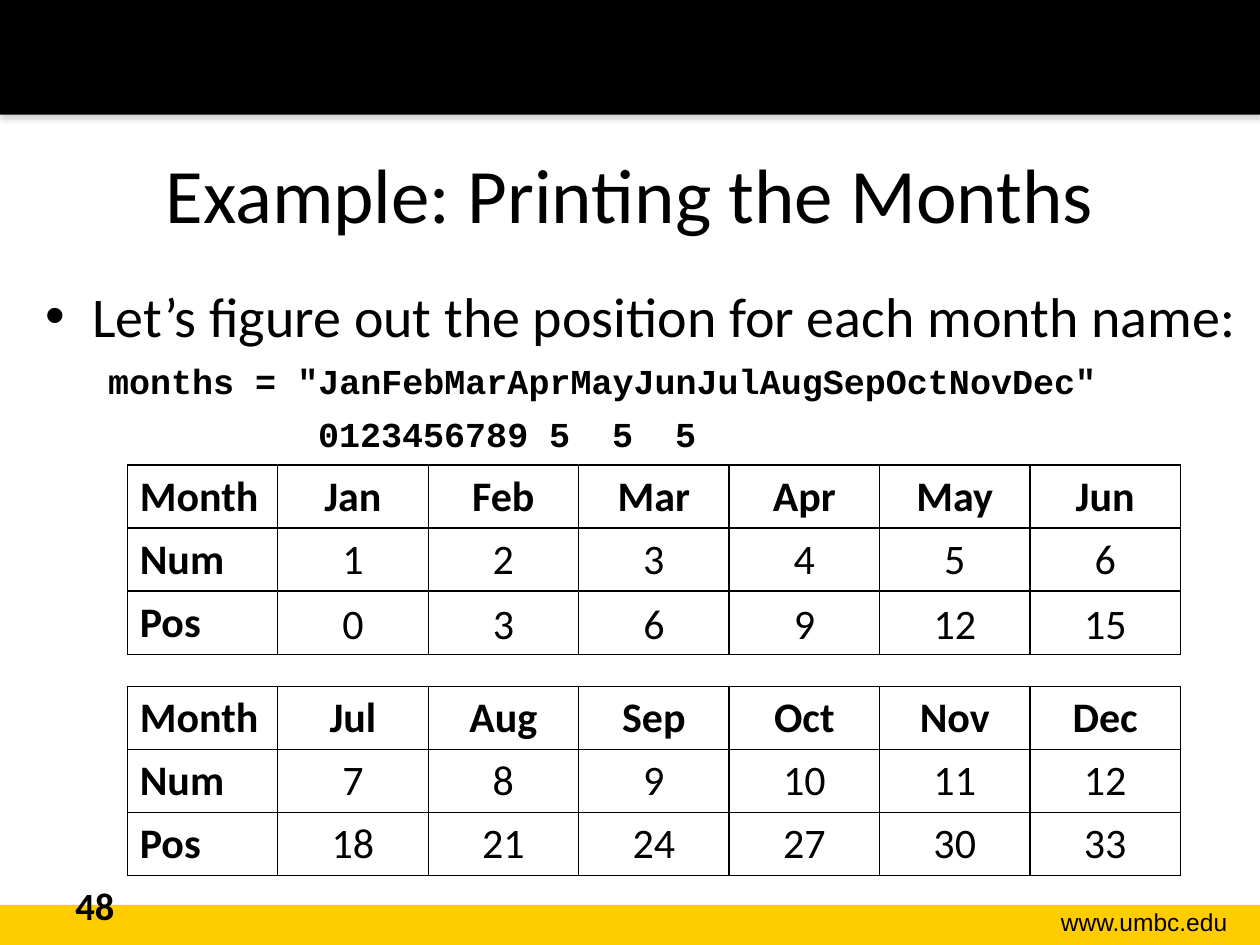
from dataclasses import dataclass

from lxml import etree
from pptx import Presentation
from pptx import util as u
from pptx.dml.color import RGBColor
from pptx.enum import shapes, text
from pptx.oxml.ns import qn

Pt = u.Pt
LEFT, CENTER, RIGHT = text.PP_ALIGN.LEFT, text.PP_ALIGN.CENTER, text.PP_ALIGN.RIGHT
TOP, MIDDLE = text.MSO_ANCHOR.TOP, text.MSO_ANCHOR.MIDDLE


@dataclass(frozen=True)
class Theme:
    ink: str = "000000"
    paper: str = "FFFFFF"
    gold: str = "FFCC00"
    shade: str = "808080"
    body_font: str = "Calibri"
    code_font: str = "Courier New"
    footer_font: str = "Arial"
    title_size: int = 44
    body_size: int = 32
    table_size: int = 24
    number_size: int = 22
    code_size: int = 20
    footer_size: int = 14


THEME = Theme()


def rgb(value):
    return RGBColor.from_string(value)


def child(parent, tag, **attributes):
    return etree.SubElement(parent, qn(tag), {k: str(v) for k, v in attributes.items()})


def write(paragraph, words, *, size, font=THEME.body_font, bold=False,
          align=LEFT, before=0, margin=0, indent=0, bullet=None, tabs=()):
    """Put formatted words into a paragraph."""
    properties = paragraph._p.get_or_add_pPr()
    properties.set("marL", str(Pt(margin)))
    properties.set("indent", str(Pt(indent)))
    paragraph.alignment = align
    paragraph.space_before = Pt(before)
    if bullet:
        child(properties, "a:buFont", typeface="Arial")
        child(properties, "a:buChar", char=bullet)
    else:
        child(properties, "a:buNone")
    if tabs:
        stops = child(properties, "a:tabLst")
        for stop in tabs:
            child(stops, "a:tab", pos=Pt(stop), algn="l")
    run = paragraph.add_run()
    run.text = words
    run.font.name, run.font.size, run.font.bold = font, Pt(size), bold
    run.font.color.rgb = rgb(THEME.ink)


class SlideBuilder:
    def __init__(self, deck, theme):
        self.theme = theme
        self.slide = deck.slides.add_slide(deck.slide_layouts[5])

    def title(self, words, left, top, width, height):
        heading = self.slide.shapes.title
        heading.left, heading.top, heading.width, heading.height = map(
            Pt, (left, top, width, height))
        heading.text_frame.vertical_anchor = MIDDLE
        write(heading.text_frame.paragraphs[0], words,
              size=self.theme.title_size, align=CENTER)

    def band(self, top, height, color, shadow=False):
        bar = self.slide.shapes.add_shape(
            shapes.MSO_SHAPE.RECTANGLE, 0, Pt(top), Pt(720), Pt(height))
        bar.fill.solid()
        bar.fill.fore_color.rgb = rgb(color)
        bar.line.fill.background()
        bar.shadow.inherit = False
        if shadow:
            effects = bar._element.spPr.find(qn("a:effectLst"))
            outer = child(effects, "a:outerShdw", blurRad=Pt(3.1), dist=Pt(1.8),
                          dir=90 * 60000, rotWithShape=0)
            tint = child(outer, "a:srgbClr", val=self.theme.shade)
            child(tint, "a:alpha", val=35000)

    def text_box(self, left, top, width, height, *lines):
        """Each line is a pair: words and their format."""
        box = self.slide.shapes.add_textbox(*map(Pt, (left, top, width, height)))
        frame = box.text_frame
        frame.word_wrap = True
        frame.vertical_anchor = TOP
        for index, (words, style) in enumerate(lines):
            paragraph = frame.add_paragraph() if index else frame.paragraphs[0]
            write(paragraph, words, **style)
        return frame

    def table(self, left, top, column, row, rows):
        count = len(rows[0])
        grid = self.slide.shapes.add_table(
            len(rows), count, Pt(left), Pt(top),
            Pt(column * count), Pt(row * len(rows))).table
        for r, values in enumerate(rows):
            grid.rows[r].height = Pt(row)
            for c, value in enumerate(values):
                grid.columns[c].width = Pt(column)
                cell = grid.cell(r, c)
                self.borders(cell)
                cell.fill.solid()
                cell.fill.fore_color.rgb = rgb(self.theme.paper)
                if value != "":
                    write(cell.text_frame.paragraphs[0], str(value),
                          size=self.theme.table_size, bold=r == 0 or c == 0,
                          align=CENTER if c else LEFT)

    def borders(self, cell):
        properties = cell._tc.get_or_add_tcPr()
        for side in ("a:lnL", "a:lnR", "a:lnT", "a:lnB"):
            line = child(properties, side, w=Pt(0.75))
            child(child(line, "a:solidFill"), "a:srgbClr", val=self.theme.ink)


def main():
    deck = Presentation()
    deck.slide_width, deck.slide_height = Pt(720), Pt(540)
    page = SlideBuilder(deck, THEME)

    # Bands and footer
    page.band(517, 23, THEME.gold)
    page.band(0, 65.5, THEME.ink, shadow=True)
    page.text_box(565, 515, 143.5, 24.2, (
        "www.umbc.edu",
        dict(size=THEME.footer_size, font=THEME.footer_font, align=RIGHT)))

    # Title
    page.title("Example: Printing the Months", 36, 65, 648, 90)

    # Question, code and index ruler under the string
    char = 0.6 * THEME.code_size
    code_left = 36
    string_left = code_left + 10 * char
    code = dict(size=THEME.code_size, font=THEME.code_font, bold=True, before=6)
    months = ["Jan", "Feb", "Mar", "Apr", "May", "Jun",
              "Jul", "Aug", "Sep", "Oct", "Nov", "Dec"]
    question = page.text_box(
        18.7, 155, 701.3, 327.5,
        ("Let’s figure out the position for each month name:",
         dict(size=THEME.body_size, margin=27, indent=-27, bullet="•")),
        (f'months = "{"".join(months)}"', dict(code, margin=code_left)),
        ("0123456789\t5\t5\t5",
         dict(code, indent=string_left,
              tabs=[string_left + i * char for i in (15, 25, 35)])))
    question.margin_top = Pt(6)

    # Slide number
    page.text_box(36, 500.5, 168, 29, (
        "48", dict(size=THEME.number_size, bold=True)))

    # Half-year tables; the first leaves its positions open
    left, column, row, first_top, second_top = 72.7, 86, 36, 265.7, 392.2
    positions = [3 * i for i in range(12)]
    for top, start in ((first_top, 0), (second_top, 6)):
        half = range(start, start + 6)
        page.table(left, top, column, row, [
            ["Month"] + [months[i] for i in half],
            ["Num"] + [i + 1 for i in half],
            ["Pos"] + [positions[i] if start else "" for i in half]])

    # Answers laid over the open cells
    width = 50
    for index, position in enumerate(positions[:6], start=1):
        page.text_box(left + index * column + (column - width) / 2, 337.7, width, 36,
                      (str(position), dict(size=THEME.table_size, align=CENTER)))

    deck.save("out.pptx")


if __name__ == "__main__":
    main()
